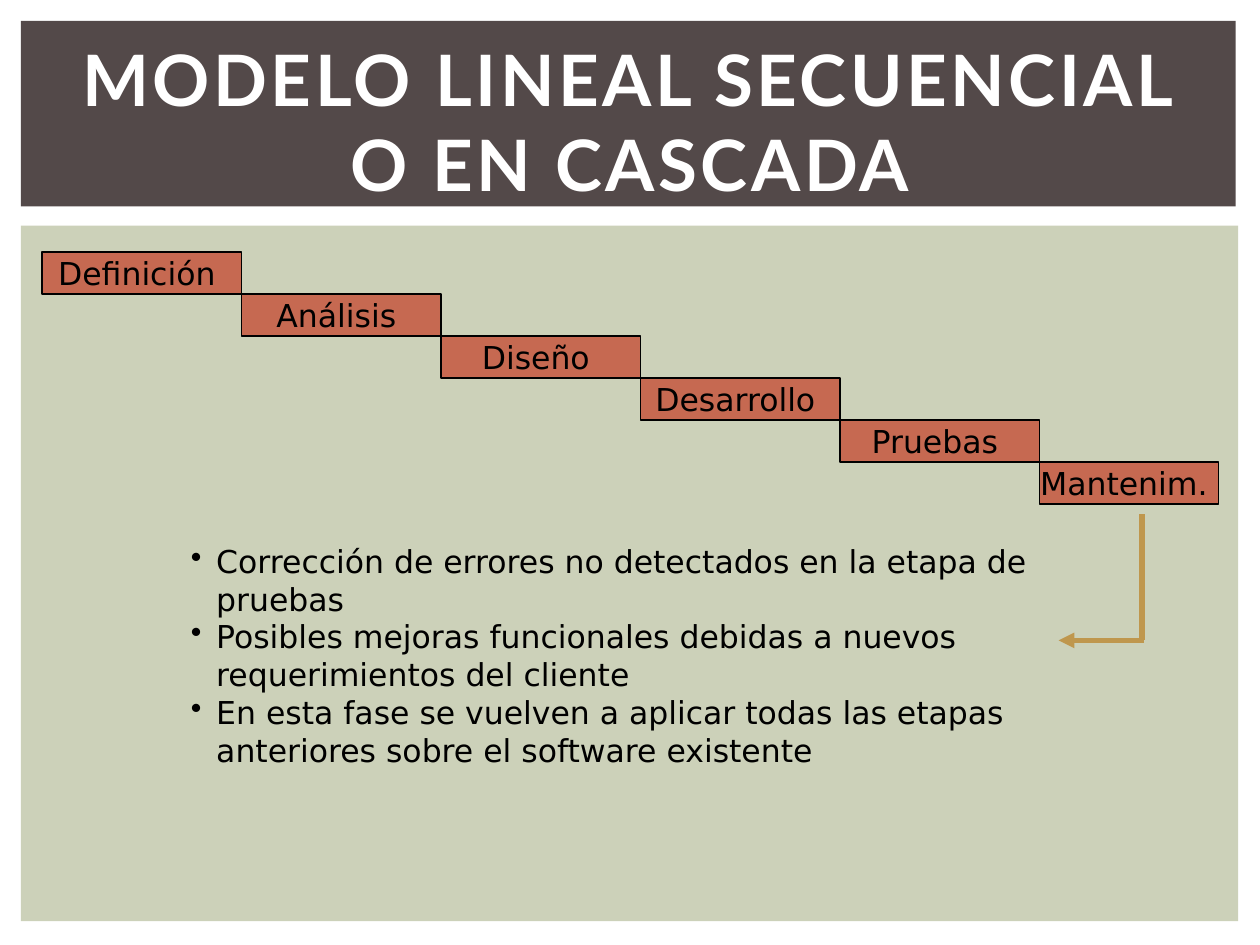
from lxml import etree
from pptx import Presentation
from pptx.dml.color import RGBColor
from pptx.enum import shapes, text
from pptx.oxml.ns import qn
from pptx.util import Cm, Pt

TITLE = ["MODELO LINEAL SECUENCIAL", "O EN CASCADA"]
STAGES = ["Definición ", "Análisis ", "Diseño ", "Desarrollo ", "Pruebas ", "Mantenim. "]
NOTES = [
    "Corrección de errores no detectados en la etapa de pruebas",
    "Posibles mejoras funcionales debidas a nuevos requerimientos del cliente",
    "En esta fase se vuelven a aplicar todas las etapas anteriores sobre el software existente",
]


def color(hex_value):
    return RGBColor.from_string(hex_value)


def style(r, size, font, hex_value, bold=False):
    r.font.size, r.font.name, r.font.bold = Pt(size), font, bold
    r.font.color.rgb = color(hex_value)


def rect(s, x, y, w, h, fill, line=None):
    sp = s.shapes.add_shape(shapes.MSO_SHAPE.RECTANGLE, Cm(x), Cm(y), Cm(w), Cm(h))
    sp.shadow.inherit = False
    sp.fill.solid()
    sp.fill.fore_color.rgb = color(fill)
    if line:
        sp.line.color.rgb = color(line)
        sp.line.width = Pt(0.75)
    else:
        sp.line.fill.background()
    return sp


def title_band(s, x, y, w, h):
    rect(s, x, y, w, h, "534949")
    tf = s.shapes.add_textbox(Cm(x + 0.64), Cm(y + 0.56), Cm(w - 1.2), Cm(2.92)).text_frame
    tf.word_wrap = True
    tf.vertical_anchor = text.MSO_ANCHOR.MIDDLE
    p = tf.paragraphs[0]
    p.alignment = text.PP_ALIGN.CENTER
    for i, line in enumerate(TITLE):
        if i:
            p.add_line_break()
        r = p.add_run()
        r.text = line
        style(r, 40.5, "Lato", "FFFFFF", bold=True)
        r.font._element.set("spc", "200")


def cascade(s, x, y, w, h):
    """Stages stepping down to the right; the last one is slightly narrower."""
    step, row = (w + 0.42) / len(STAGES), h / len(STAGES)
    for i, stage in enumerate(STAGES):
        left = x + i * step
        sp = rect(s, left, y + i * row, min(step, x + w - left), row, "C66951", "000000")
        tf = sp.text_frame
        tf.word_wrap = False
        tf.vertical_anchor = text.MSO_ANCHOR.MIDDLE
        p = tf.paragraphs[0]
        p.alignment = text.PP_ALIGN.CENTER
        r = p.add_run()
        r.text = stage
        style(r, 18, "DejaVu Sans", "000000")


def notes_list(s, x, y, w, h):
    tf = s.shapes.add_textbox(Cm(x), Cm(y), Cm(w), Cm(h)).text_frame
    tf.word_wrap = True
    for i, note in enumerate(NOTES):
        p = tf.add_paragraph() if i else tf.paragraphs[0]
        pPr = p._p.get_or_add_pPr()
        pPr.set("marL", str(Cm(0.51)))
        pPr.set("indent", str(-Cm(0.51)))
        etree.SubElement(pPr, qn("a:buChar")).set("char", "•")
        r = p.add_run()
        r.text = note
        style(r, 18, "DejaVu Sans", "000000")


def line(s, x1, y1, x2, y2, arrow=False):
    c = s.shapes.add_connector(shapes.MSO_CONNECTOR.STRAIGHT, Cm(x1), Cm(y1), Cm(x2), Cm(y2))
    c.line.color.rgb = color("BF974D")
    c.line.width = Pt(3)
    if arrow:
        etree.SubElement(c.line._get_or_add_ln(), qn("a:tailEnd")).set("type", "triangle")
    etree.SubElement(c._element.spPr, qn("a:effectLst"))


def return_arrow(s, x, y, w, h):
    """Runs down the right edge of the box, then left along its foot."""
    line(s, x + w - 0.04, y, x + w - 0.04, y + h)
    line(s, x + w, y + h, x, y + h, arrow=True)


def main():
    prs = Presentation()
    prs.slide_width, prs.slide_height = Cm(25.4), Cm(19.05)
    s = prs.slides.add_slide(prs.slide_layouts[6])
    rect(s, 0.42, 4.55, 24.54, 14.02, "CCD1B9")
    title_band(s, 0.42, 0.42, 24.49, 3.74)
    cascade(s, 0.85, 5.08, 23.71, 5.08)
    notes_list(s, 3.6, 10.8, 17.57, 4.83)
    return_arrow(s, 21.34, 10.37, 1.72, 2.54)
    prs.save("out.pptx")


if __name__ == "__main__":
    main()
